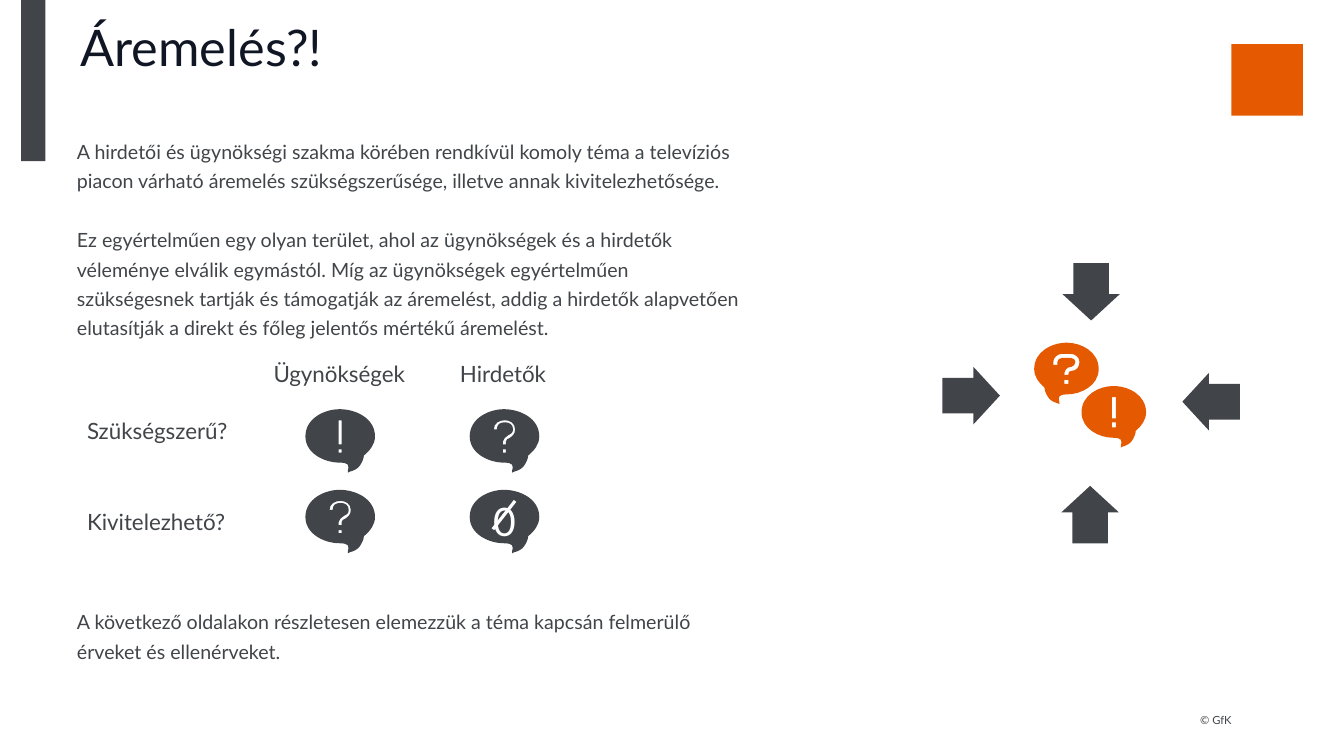
"""Builds the price increase slide on a grid of 160 columns by 90 rows."""
from lxml import etree
from pptx import Presentation
from pptx import util as u
from pptx.dml.color import RGBColor
from pptx.enum import shapes, text
from pptx.oxml import ns

CELL = u.Inches(1) / 12
BUBBLE_UNIT = 0.12
FONT = "Lato"
GREY, ORANGE, NAVY, WHITE = "414549", "E55A00", "101623", "FFFFFF"
INTRO = [
    ("A hirdetői és ügynökségi szakma körében rendkívül komoly téma a televíziós piacon várható "
     "áremelés szükségszerűsége, illetve annak kivitelezhetősége.", 0),
    ("Ez egyértelműen egy olyan terület, ahol az ügynökségek és a hirdetők véleménye elválik "
     "egymástól. Míg az ügynökségek egyértelműen szükségesnek tartják és támogatják az áremelést, "
     "addig a hirdetők alapvetően elutasítják a direkt és főleg jelentős mértékű áremelést.", 21),
    ("A következő oldalakon részletesen elemezzük a téma kapcsán felmerülő érveket és "
     "ellenérveket.", 189),
]
OPINIONS = [
    ["", "Ügynökségek", "Hirdetők"],
    ["Szükségszerű?", "", ""],
    ["Kivitelezhető?", "", ""],
]
ARROWS = [(112.2, 43.68, 0), (140.76, 44.4, 180), (126.48, 31.32, 90), (126.36, 57.84, 270)]
OUTLINE = [(58, 46), (58, 49, 56, 53, 54, 56), (52, 59, 48, 61, 44, 62), (42, 63), (42, 61),
           (43, 59, 43, 57, 42, 55), (41, 54, 39, 53, 34, 53), (19, 53, 0, 44, 0, 27),
           (0, 9, 19, 0, 34, 0), (50, 0, 69, 9, 69, 27), (69, 35, 64, 41, 58, 46)]
THIN_HOOK = [(35, 11), (29, 11, 24, 14, 24, 20), (27, 20), (27, 15, 30, 13, 35, 13),
             (39, 13, 43, 15, 43, 20), (43, 24, 40, 25, 38, 26), (36, 28, 33, 29, 33, 32),
             (33, 35), (36, 35), (36, 32), (36, 30, 38, 29, 39, 29),
             (42, 27, 45, 25, 45, 20), (45, 14, 40, 11, 35, 11)]
BOLD_HOOK = [(45, 19), (45, 15, 41, 11, 36, 11), (28, 11), (23, 11, 19, 15, 19, 19), (19, 22),
             (23, 22), (23, 19), (23, 17, 25, 15, 28, 15), (36, 15), (39, 15, 41, 17, 41, 19),
             (41, 22, 39, 23, 37, 24), (33, 24, 30, 27, 30, 31), (30, 32), (34, 32), (34, 31),
             (34, 29, 35, 28, 37, 28), (42, 28, 45, 24, 45, 19)]


def grid(*cells):
    """Turn grid cells into slide lengths."""
    return [u.Emu(round(cell * CELL)) for cell in cells]


def colour(value):
    """Turn a hex string into a colour."""
    return RGBColor.from_string(value)


def paint(shape, fill):
    """Give a shape a flat fill without outline or shadow."""
    shape.shadow.inherit = False
    shape.fill.solid()
    shape.fill.fore_color.rgb = colour(fill)
    shape.line.fill.background()


def style(para, size, fill):
    """Set the font of a paragraph."""
    para.font.name = FONT
    para.font.size = u.Pt(size)
    para.font.color.rgb = colour(fill)


def add_text(page, place, paras, size, fill, spacing=1.25, align=text.PP_ALIGN.LEFT,
             anchor=text.MSO_ANCHOR.TOP, wrap=True):
    """Add a text box from pairs of wording and space before."""
    frame = page.shapes.add_textbox(*grid(*place)).text_frame
    frame.word_wrap = wrap
    frame.vertical_anchor = anchor
    frame.margin_left = frame.margin_right = frame.margin_top = frame.margin_bottom = 0
    for index, (wording, gap) in enumerate(paras):
        para = frame.add_paragraph() if index else frame.paragraphs[0]
        para.text = wording
        para.alignment = align
        para.line_spacing = spacing
        if gap:
            para.space_before = u.Pt(gap)
        style(para, size, fill)


def add_block(page, place, fill):
    """Add a plain rectangle."""
    paint(page.shapes.add_shape(shapes.MSO_SHAPE.RECTANGLE, *grid(*place)), fill)


def add_arrow(page, left, top, rotation):
    """Add a block arrow turned towards the centre."""
    arrow = page.shapes.add_shape(shapes.MSO_SHAPE.RIGHT_ARROW, *grid(left, top, 6.84, 6.84))
    arrow.adjustments[0], arrow.adjustments[1] = 0.62, 0.46
    arrow.rotation = rotation
    paint(arrow, GREY)


def rectangle(left, top, right, bottom):
    """Return the contour of an upright rectangle."""
    return [(left, top), (right, top), (right, bottom), (left, bottom)]


def bubble(left, top, sign, width=69, height=63, mirrored=False):
    """Return the placed contours of a speech bubble and the sign cut out of it."""
    stretch = width / 69
    outline = [[width - v * stretch if mirrored and not i % 2 else
                v * (height / 63 if i % 2 else stretch) for i, v in enumerate(part)]
               for part in OUTLINE]
    return [[grid(*((top if i % 2 else left) + v * BUBBLE_UNIT for i, v in enumerate(part)))
             for part in contour] for contour in [outline] + sign]


def add_outline(page, contours, fill):
    """Add one shape from contours of lines and cubic curves."""
    builder = page.shapes.build_freeform(*contours[0][0])
    for contour in contours:
        if contour is not contours[0]:
            builder.move_to(*contour[0])
        builder.add_line_segments([part[-2:] for part in contour[1:]], close=True)
    shape = builder.convert_to_shape()
    segments = list(shape._element.iter(ns.qn("a:lnTo")))
    parts = [part for contour in contours for part in contour[1:]]
    for segment, part in zip(segments, parts):
        if len(part) == 6:
            curve = etree.Element(ns.qn("a:cubicBezTo"))
            for x, y in zip(part[::2], part[1::2]):
                etree.SubElement(curve, ns.qn("a:pt"), x=str(x - shape.left),
                                 y=str(y - shape.top))
            segment.getparent().replace(segment, curve)
    paint(shape, fill)


def add_opinions(page):
    """Add the table of questions and respondents."""
    heights = grid(6.8, 10.72, 6.84)
    table = page.shapes.add_table(3, 3, *grid(9.16, 42.36, 66.6, 24.36)).table
    table.first_row = table.horz_banding = False
    for column in table.columns:
        column.width = grid(22.2)[0]
    for row, height, wordings in zip(table.rows, heights, OPINIONS):
        row.height = height
        for cell, wording in zip(row.cells, wordings):
            cell.fill.background()
            cell.text = wording
            style(cell.text_frame.paragraphs[0], 16, GREY)


def add_stroke(page, start, end):
    """Add the white stroke through the zero."""
    stroke = page.shapes.add_connector(shapes.MSO_CONNECTOR.STRAIGHT, *grid(*start, *end))
    stroke.line.color.rgb = colour(WHITE)
    stroke.line.width = u.Pt(2.25)
    etree.SubElement(stroke._element.spPr, ns.qn("a:effectLst"))


def main():
    """Build and save the slide."""
    deck = Presentation()
    deck.slide_width, deck.slide_height = grid(160, 90)
    page = deck.slides.add_slide(deck.slide_layouts[6])

    add_block(page, (146.6, 5.24, 8.52, 8.52), ORANGE)
    add_block(page, (2.52, 0, 2.88, 19.2), GREY)
    add_text(page, (140.04, 84.72, 6.6, 1.8), [("© GfK", 0)], 8, GREY,
             align=text.PP_ALIGN.RIGHT, anchor=text.MSO_ANCHOR.BOTTOM, wrap=False)
    add_text(page, (9.16, 15.96, 79.92, 65.64), INTRO, 14, GREY)
    add_text(page, (9.6, 3, 101.4, 6.48), [("Áremelés?!", 0)], 36, NAVY, spacing=0.85)

    for arrow in ARROWS:
        add_arrow(page, *arrow)
    bold_question = [BOLD_HOOK, rectangle(30, 37, 34, 41)]
    bold_exclamation = [rectangle(30, 11, 34, 32), rectangle(30, 36, 34, 41)]
    dialogue = (bubble(128.76, 45.96, bold_exclamation, 64, 61)
                + bubble(123.12, 40.8, bold_question, 64, 61, mirrored=True))
    add_outline(page, dialogue, ORANGE)

    add_opinions(page)
    dot = rectangle(33, 40, 36, 43)
    question, exclamation = [THIN_HOOK, dot], [rectangle(33, 11, 36, 35), dot]
    for top, signs in ((48.72, (exclamation, question)), (58.32, (question, []))):
        for left, sign in zip((36.36, 55.92), signs):
            add_outline(page, bubble(left, top, sign), GREY)
    add_text(page, (53.88, 57.84, 12.36, 10.32), [("0", 0)], 28, WHITE,
             align=text.PP_ALIGN.CENTER)
    add_stroke(page, (61.32, 59.64), (58.68, 63))
    deck.save("out.pptx")


if __name__ == "__main__":
    main()
